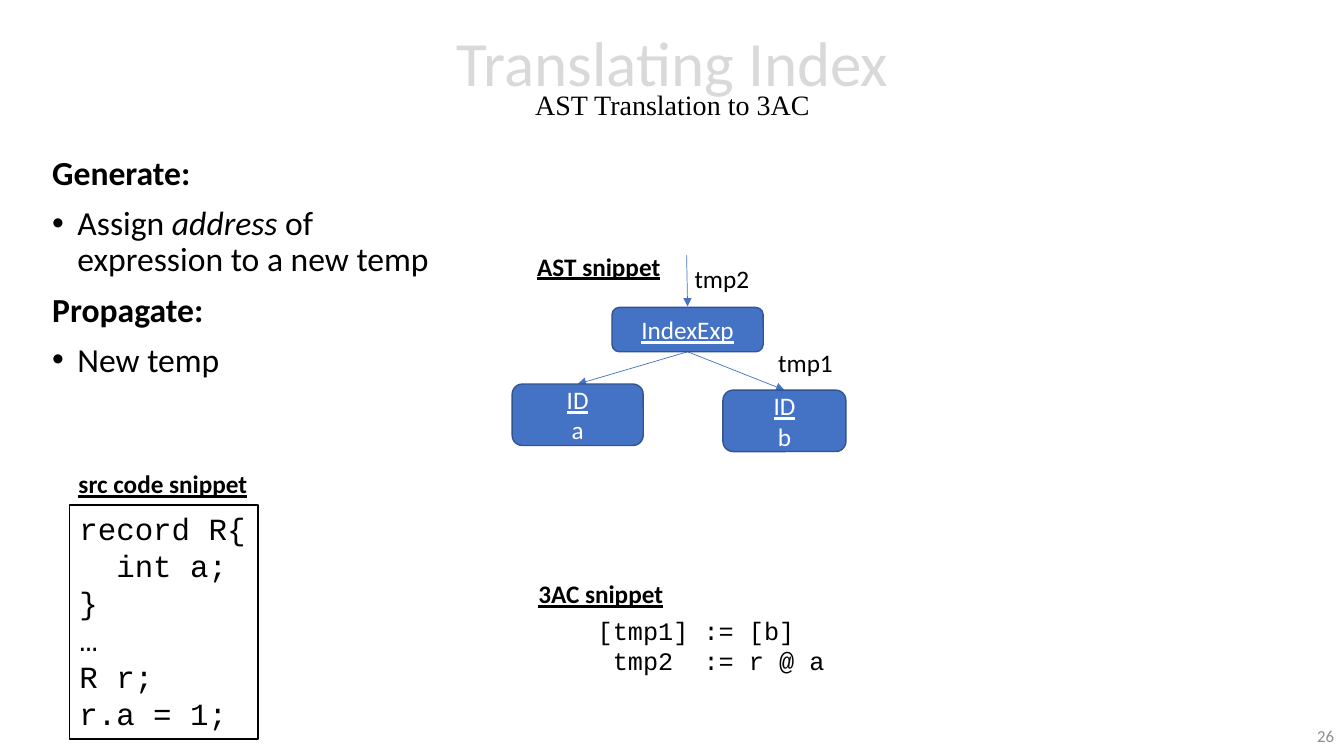
from lxml.etree import SubElement
from pptx import Presentation
from pptx.dml.color import RGBColor
from pptx.enum.shapes import MSO_CONNECTOR, MSO_SHAPE
from pptx.enum.text import MSO_ANCHOR, PP_ALIGN
from pptx.oxml.ns import qn
from pptx.util import Inches, Pt

BLACK = RGBColor(0x00, 0x00, 0x00)
WHITE = RGBColor(0xFF, 0xFF, 0xFF)
TITLE_GRAY = RGBColor(0xD9, 0xD9, 0xD9)
NUMBER_GRAY = RGBColor(0x8C, 0x8C, 0x8C)
BLUE = RGBColor(0x44, 0x72, 0xC4)
DARK_BLUE = RGBColor(0x32, 0x54, 0x91)

presentation = Presentation()
presentation.slide_width = Inches(13.33)
presentation.slide_height = Inches(7.5)
slide = presentation.slides.add_slide(presentation.slide_layouts[6])


def add_text(paragraph, text, size=18, font="Calibri", color=BLACK,
             bold=False, italic=False, underline=False):
    run = paragraph.add_run()
    run.text = text
    run.font.size = Pt(size)
    run.font.name = font
    run.font.color.rgb = color
    run.font.bold = bold
    run.font.italic = italic
    run.font.underline = underline


def add_box(left, top, width, height, preset=None, fill=None, line=None,
            wrap=True, anchor=MSO_ANCHOR.TOP):
    bounds = [Inches(value) for value in (left, top, width, height)]
    if preset is None:
        shape = slide.shapes.add_textbox(*bounds)
    else:
        shape = slide.shapes.add_shape(preset, *bounds)
        shape.shadow.inherit = False
        shape.fill.solid()
        shape.fill.fore_color.rgb = fill
        shape.line.color.rgb = line
        shape.line.width = Pt(1)
    shape.text_frame.word_wrap = wrap
    shape.text_frame.vertical_anchor = anchor
    return shape.text_frame


title = add_box(1.67, 0.09, 10, 1.45, anchor=MSO_ANCHOR.MIDDLE).paragraphs[0]
title.alignment = PP_ALIGN.CENTER
title.line_spacing = 0.7
add_text(title, "Translating Index", size=45, color=TITLE_GRAY)
title.add_line_break()
add_text(title, "AST Translation to 3AC", size=20, font="Times New Roman")

body = add_box(0.42, 1.5, 4.06, 2.92)
body_lines = [
    (False, [("Generate:", {"bold": True})]),
    (True, [("Assign ", {}), ("address ", {"italic": True}),
            ("of expression to a new temp", {})]),
    (False, [("Propagate:", {"bold": True})]),
    (True, [("New temp", {})]),
]
for index, (bulleted, runs) in enumerate(body_lines):
    paragraph = body.add_paragraph() if index else body.paragraphs[0]
    paragraph.line_spacing = 0.9
    paragraph.space_before = Pt(10)
    if bulleted:
        properties = paragraph._p.get_or_add_pPr()
        properties.set("marL", str(Inches(0.25)))
        properties.set("indent", str(Inches(-0.25)))
        SubElement(properties, qn("a:buFont")).set("typeface", "Arial")
        SubElement(properties, qn("a:buChar")).set("char", "•")
    for text, text_format in runs:
        add_text(paragraph, text, size=24, **text_format)

arrows = [
    (6.82, 3.49, 5.73, 3.81),
    (6.82, 3.49, 7.78, 3.87),
    (6.81, 2.53, 6.82, 3.04),
]
for arrow in arrows:
    connector = slide.shapes.add_connector(
        MSO_CONNECTOR.STRAIGHT, *[Inches(value) for value in arrow])
    connector.line.color.rgb = BLUE
    connector.line.width = Pt(0.5)
    SubElement(connector.line._get_or_add_ln(), qn("a:tailEnd")).set("type", "triangle")
    SubElement(connector.element.spPr, qn("a:effectLst"))

tree_nodes = [
    (6.07, 3.05, 1.5, 0.44, ["IndexExp"]),
    (5.08, 3.81, 1.3, 0.61, ["ID", "a"]),
    (7.17, 3.87, 1.22, 0.61, ["ID", "b"]),
]
for left, top, width, height, lines in tree_nodes:
    node = add_box(left, top, width, height, preset=MSO_SHAPE.ROUNDED_RECTANGLE,
                   fill=BLUE, line=DARK_BLUE, anchor=MSO_ANCHOR.MIDDLE)
    for index, text in enumerate(lines):
        paragraph = node.add_paragraph() if index else node.paragraphs[0]
        paragraph.alignment = PP_ALIGN.CENTER
        add_text(paragraph, text, color=WHITE, underline=index == 0)

labels = [
    (0.68, 4.6, 1.89, "src code snippet", True),
    (5.23, 2.44, 1.43, "AST snippet", True),
    (5.24, 5.69, 1.45, "3AC snippet", True),
    (6.79, 2.56, 0.75, "tmp2", False),
    (7.62, 3.4, 0.75, "tmp1", False),
]
for left, top, width, text, heading in labels:
    label = add_box(left, top, width, 0.4, wrap=False)
    add_text(label.paragraphs[0], text, bold=heading, underline=heading)

source_code = add_box(0.69, 5.01, 1.87, 2.32, preset=MSO_SHAPE.RECTANGLE,
                      fill=WHITE, line=BLACK, wrap=False)
three_address_code = add_box(5.83, 6.05, 2.46, 0.71, wrap=False)
listings = [
    (source_code, 22, ["record R{", "  int a;", "}", "…", "R r;", "r.a = 1;"]),
    (three_address_code, 18, ["[tmp1] := [b]", " tmp2  := r @ a"]),
]
for listing, size, lines in listings:
    for index, text in enumerate(lines):
        paragraph = listing.add_paragraph() if index else listing.paragraphs[0]
        paragraph.alignment = PP_ALIGN.LEFT
        add_text(paragraph, text, size=size, font="Courier New")

slide_number = add_box(10.33, 7.1, 3, 0.4, anchor=MSO_ANCHOR.MIDDLE).paragraphs[0]
slide_number.alignment = PP_ALIGN.RIGHT
add_text(slide_number, "26", size=12, color=NUMBER_GRAY)

presentation.save("out.pptx")
